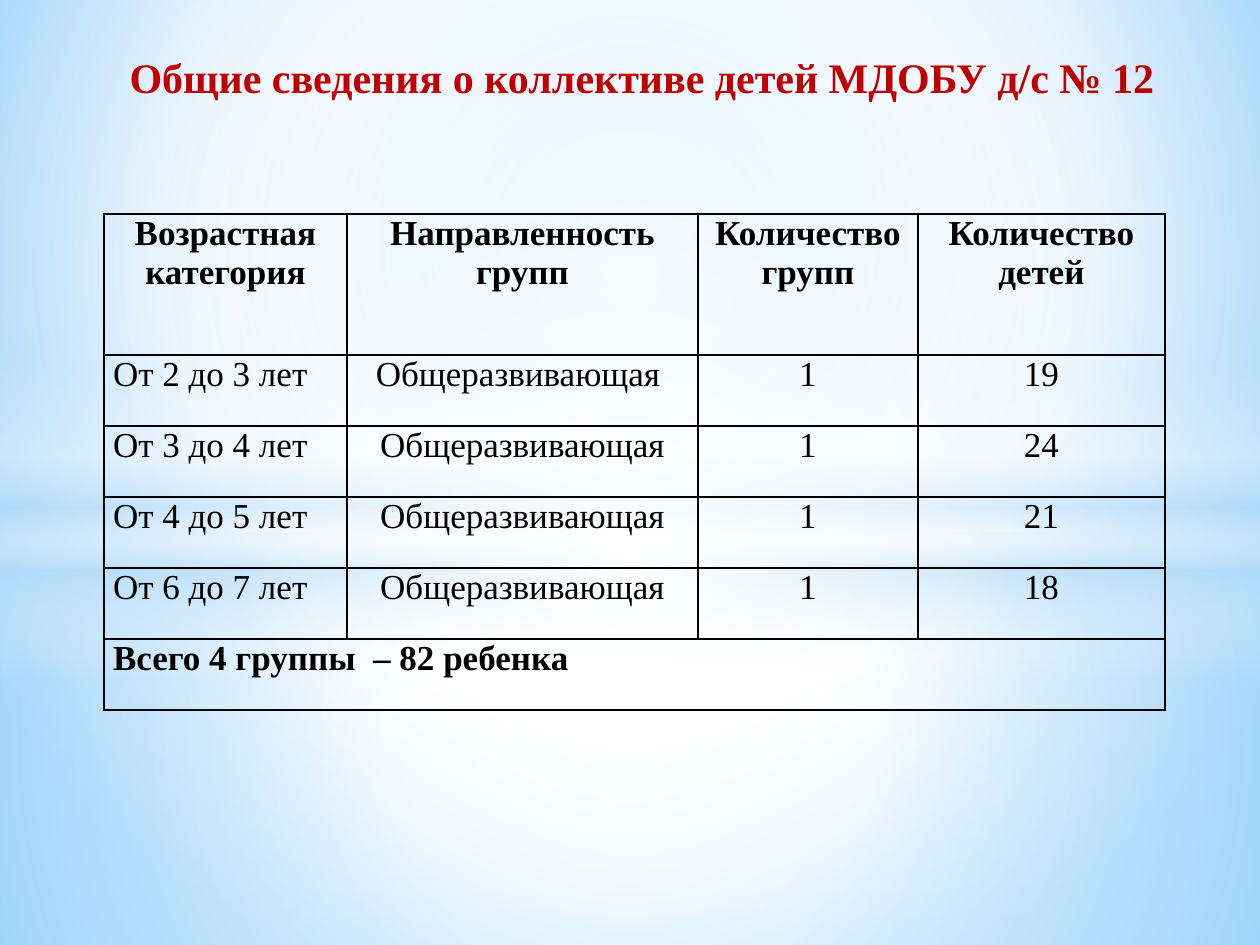
from dataclasses import dataclass

from lxml import etree
from pptx import Presentation
from pptx.dml.color import RGBColor
from pptx.enum.shapes import MSO_SHAPE
from pptx.enum.text import MSO_ANCHOR, PP_ALIGN
from pptx.oxml.ns import qn
from pptx.util import Emu, Pt

RECT, OVAL = MSO_SHAPE.RECTANGLE, MSO_SHAPE.OVAL
LEFT, CENTER = PP_ALIGN.LEFT, PP_ALIGN.CENTER
TOP = MSO_ANCHOR.TOP
EMU_PER_INCH, PX_PER_INCH = 914400, 126


@dataclass(frozen=True)
class Theme:
    """Colours, font and type sizes of the deck."""
    font: str = "Times New Roman"
    title: str = "C00000"
    ink: str = "000000"
    white: str = "FFFFFF"
    haze: str = "B4DCFA"
    core: str = "9ED5FF"
    edge: str = "5BB9FF"
    title_size: int = 24
    table_size: int = 20
    border: int = 1


def px(length):
    """Turn pixels into EMU."""
    return Emu(round(length * EMU_PER_INCH / PX_PER_INCH))


class SlideBuilder:
    """Holds the theme and the current slide and draws elements on it."""

    def __init__(self, theme, page):
        """Keep the theme and the slide."""
        self.theme = theme
        self.page = page

    def gradient(self, element, stops, focus=None):
        """Swap the solid fill inside an element for a gradient of (position, colour, opacity)."""
        grad = etree.Element(qn("a:gradFill"), rotWithShape="1")
        stop_list = etree.SubElement(grad, qn("a:gsLst"))
        for position, color, opacity in stops:
            stop = etree.SubElement(stop_list, qn("a:gs"), pos=str(position * 1000))
            tint = etree.SubElement(stop, qn("a:srgbClr"), val=color)
            if opacity < 100:
                etree.SubElement(tint, qn("a:alpha"), val=str(opacity * 1000))
        if focus:
            circle = etree.SubElement(grad, qn("a:path"), {"path": "circle"})
            sides = {side: str(share * 1000) for side, share in zip("ltrb", focus)}
            etree.SubElement(circle, qn("a:fillToRect"), sides)
        else:
            etree.SubElement(grad, qn("a:lin"), ang="5400000", scaled="0")
        solid = element.find(".//" + qn("a:solidFill"))
        solid.getparent().replace(solid, grad)

    def background(self, stops, focus):
        """Fill the slide background with a gradient."""
        self.page.background.fill.solid()
        self.gradient(self.page.element, stops, focus)

    def glow(self, kind, left, top, width, height, stops, focus=None):
        """Draw an unlined shape with a gradient fill."""
        shape = self.page.shapes.add_shape(kind, px(left), px(top), px(width), px(height))
        shape.shadow.inherit = False
        shape.line.fill.background()
        shape.fill.solid()
        self.gradient(shape.element, stops, focus)

    def add_text(self, frame, text, size, color, bold, align):
        """Put one paragraph into a text frame."""
        para = frame.paragraphs[0]
        para.alignment = align
        span = para.add_run()
        span.text = text
        span.font.name = self.theme.font
        span.font.size = Pt(size)
        span.font.bold = bold
        span.font.color.rgb = RGBColor.from_string(color)

    def title(self, text, left, top, width, height, indent):
        """Add the centred slide title."""
        box = self.page.shapes.add_textbox(px(left), px(top), px(width), px(height))
        frame = box.text_frame
        frame.word_wrap = True
        frame.vertical_anchor = TOP
        frame.margin_left += px(indent)
        self.add_text(frame, text, self.theme.title_size, self.theme.title, True, CENTER)

    def cell(self, cell, text, bold, align):
        """Style one table cell and fill in its text."""
        cell.margin_left = cell.margin_right = px(9)
        cell.margin_top = cell.margin_bottom = 0
        properties = cell._tc.get_or_add_tcPr()
        for side in ("a:lnL", "a:lnR", "a:lnT", "a:lnB"):
            line = etree.SubElement(properties, qn(side), w=str(Pt(self.theme.border)))
            solid = etree.SubElement(line, qn("a:solidFill"))
            etree.SubElement(solid, qn("a:srgbClr"), val=self.theme.ink)
        cell.fill.background()
        if text:
            self.add_text(
                cell.text_frame, text, self.theme.table_size, self.theme.ink, bold, align)

    def table(self, left, top, widths, heights, rows):
        """Add a bordered table with a bold header and a merged bold total row."""
        frame = self.page.shapes.add_table(
            len(rows), len(widths), px(left), px(top), px(sum(widths)), px(sum(heights)))
        table = frame.table
        table.first_row = table.horz_banding = False
        for column, width in zip(table.columns, widths):
            column.width = px(width)
        for row, height in zip(table.rows, heights):
            row.height = px(height)
        last = len(rows) - 1
        table.cell(last, 0).merge(table.cell(last, len(widths) - 1))
        for r, texts in enumerate(rows):
            for c, text in enumerate(texts):
                align = LEFT if r and c == 0 else CENTER
                self.cell(table.cell(r, c), text, r in (0, last), align)


def main():
    """Build the slide about the groups of children."""
    theme = Theme()
    white, haze = theme.white, theme.haze
    deck = Presentation()
    deck.slide_width, deck.slide_height = px(1260), px(945)
    builder = SlideBuilder(theme, deck.slides.add_slide(deck.slide_layouts[6]))
    middle = (50, 50, 50, 50)

    builder.background(
        [(0, theme.core, 100), (60, white, 100), (100, theme.edge, 100)], (20, 10, 20, 60))
    builder.glow(RECT, 0, 533, 1260, 412,
                 [(0, white, 91), (37, white, 76), (100, haze, 79)], middle)
    builder.glow(RECT, 0, 0, 1260, 533,
                 [(0, white, 89), (48, white, 62), (100, haze, 79)], middle)
    builder.glow(RECT, 0, 365, 1260, 315,
                 [(0, white, 0), (29, white, 30), (45, haze, 40),
                  (55, white, 26), (65, haze, 60), (100, white, 0)])
    builder.glow(OVAL, 0, 220, 1260, 703, [(0, white, 100), (54, white, 0)], middle)

    builder.title("Общие сведения о коллективе детей МДОБУ д/с № 12", 44, 45, 1171, 100, 25)
    builder.table(104, 214, (243, 351, 220, 247), [141] + [71] * 5, [
        ("Возрастная категория", "Направленность групп", "Количество групп", "Количество детей"),
        ("От 2 до 3 лет", "Общеразвивающая ", "1", "19"),
        ("От 3 до 4 лет", "Общеразвивающая", "1", "24"),
        ("От 4 до 5 лет", "Общеразвивающая", "1", "21"),
        ("От 6 до 7 лет", "Общеразвивающая", "1", "18"),
        ("Всего 4 группы  – 82 ребенка", "", "", ""),
    ])
    deck.save("out.pptx")


if __name__ == "__main__":
    main()
